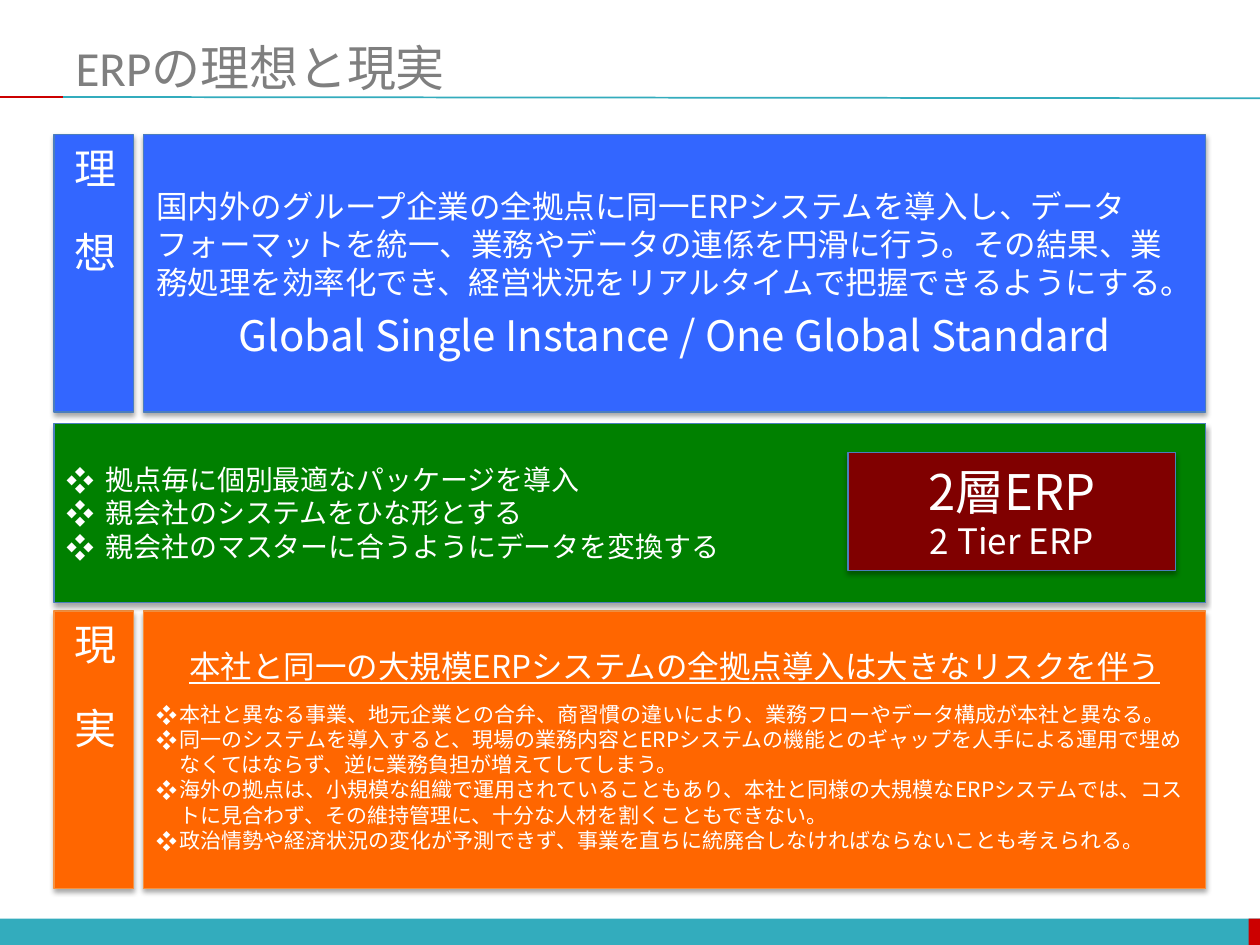
from lxml.etree import SubElement
from pptx import Presentation
from pptx.dml.color import RGBColor
from pptx.enum.shapes import MSO_CONNECTOR, MSO_SHAPE
from pptx.enum.text import MSO_ANCHOR, PP_ALIGN
from pptx.oxml.ns import qn
from pptx.util import Inches, Pt

COLORS = {
    "white": "FFFFFF", "title": "7F7F7F", "teal": "33ACBD", "red": "CC0000",
    "ideal": "3366FF", "reality": "FF6600", "bridge": "008000", "tier": "800000",
    "blue_edge": "4B7EBC", "orange_edge": "F69240", "shadow": "000000",
}
FONT = "Noto Sans CJK JP"
LEFT, RIGHT = 0.43, 9.57
LABEL_WIDTH, BODY_LEFT = 0.63, 1.14
ROW_HEIGHT = 2.2

IDEAL = "国内外のグループ企業の全拠点に同一ERPシステムを導入し、データフォーマットを統一、業務やデータの連係を円滑に行う。その結果、業務処理を効率化でき、経営状況をリアルタイムで把握できるようにする。"
RISK = "本社と同一の大規模ERPシステムの全拠点導入は大きなリスクを伴う"
RISK_POINTS = [
    "本社と異なる事業、地元企業との合弁、商習慣の違いにより、業務フローやデータ構成が本社と異なる。",
    "同一のシステムを導入すると、現場の業務内容とERPシステムの機能とのギャップを人手による運用で埋めなくてはならず、逆に業務負担が増えてしてしまう。",
    "海外の拠点は、小規模な組織で運用されていることもあり、本社と同様の大規模なERPシステムでは、コストに見合わず、その維持管理に、十分な人材を割くこともできない。",
    "政治情勢や経済状況の変化が予測できず、事業を直ちに統廃合しなければならないことも考えられる。",
]
BRIDGE_POINTS = [
    "拠点毎に個別最適なパッケージを導入",
    "親会社のシステムをひな形とする",
    "親会社のマスターに合うようにデータを変換する",
]


def rgb(name):
    return RGBColor.from_string(COLORS[name])


def add_span(para, text, size, color="white", font=FONT, underline=None):
    span = para.add_run()
    span.text = text
    span.font.size = Pt(size)
    span.font.name = font
    span.font.color.rgb = rgb(color)
    span.font.underline = underline
    SubElement(span.font._element, qn("a:ea"), typeface=FONT)
    latin = span.font._element.find(qn("a:latin"))
    latin.addnext(span.font._element.find(qn("a:ea")))


def add_para(frame, text, size, align=PP_ALIGN.LEFT, before=0, indent=None, underline=None):
    first = frame.paragraphs[0]
    para = first if not first.runs else frame.add_paragraph()
    para.alignment = align
    para.line_spacing = Pt(size * 1.2)
    para.space_before = Pt(before)
    if indent:
        props = para._p.get_or_add_pPr()
        props.set("marL", str(Inches(indent)))
        props.set("indent", str(-Inches(indent)))
        SubElement(props, qn("a:buFont"), typeface=FONT)
        SubElement(props, qn("a:buChar"), char="❖")
    add_span(para, text, size, underline=underline)
    return para


def add_panel(page, box, fill, edge="blue_edge"):
    panel = page.shapes.add_shape(MSO_SHAPE.ROUNDED_RECTANGLE, *map(Inches, box))
    panel.adjustments[0] = 0
    panel.fill.solid()
    panel.fill.fore_color.rgb = rgb(fill)
    panel.line.color.rgb = rgb(edge)
    panel.line.width = Pt(0.75)
    panel.shadow.inherit = False
    effects = panel._element.spPr.find(qn("a:effectLst"))
    shadow = SubElement(effects, qn("a:outerShdw"), blurRad=str(Pt(3.1)),
                        dist=str(Pt(1.8)), dir="5400000", rotWithShape="0")
    color = SubElement(shadow, qn("a:srgbClr"), val=COLORS["shadow"])
    SubElement(color, qn("a:alpha"), val="35000")
    frame = panel.text_frame
    frame.word_wrap = True
    frame.vertical_anchor = MSO_ANCHOR.MIDDLE
    return frame


def add_labelled_row(page, top, label, fill, edge):
    label_frame = add_panel(page, (LEFT, top, LABEL_WIDTH, ROW_HEIGHT), fill, edge)
    label_frame._txBody.bodyPr.set("vert", "eaVert")
    para = label_frame.paragraphs[0]
    para.alignment = PP_ALIGN.CENTER
    add_span(para, label, 24)
    return add_panel(page, (BODY_LEFT, top, RIGHT - BODY_LEFT, ROW_HEIGHT), fill, edge)


def add_ideal(page, top):
    frame = add_labelled_row(page, top, "理\u3000想".replace("\u3000", "　"), "ideal", "blue_edge")
    add_para(frame, IDEAL, 18)
    add_para(frame, "Global Single Instance / One Global Standard", 24, PP_ALIGN.CENTER, before=4.8)


def add_bridge(page, box):
    frame = add_panel(page, box, "bridge")
    for point in BRIDGE_POINTS:
        add_para(frame, point, 16, indent=0.31)
    left, top, width, height = box
    tier = add_panel(page, (left + 6.3, top + 0.23, 2.6, 0.94), "tier")
    add_para(tier, "2層ERP", 28, PP_ALIGN.CENTER)
    add_para(tier, "2 Tier ERP", 20, PP_ALIGN.CENTER)


def add_reality(page, top):
    frame = add_labelled_row(page, top, "現　実", "reality", "orange_edge")
    heading = add_para(frame, RISK, 18, PP_ALIGN.CENTER, underline=True)
    heading.space_after = Pt(9.6)
    for point in RISK_POINTS:
        add_para(frame, point, 12, indent=0.19)


def add_title(page, box):
    title = page.shapes.title
    title.left, title.top, title.width, title.height = map(Inches, box)
    frame = title.text_frame
    frame.word_wrap = True
    frame.vertical_anchor = MSO_ANCHOR.MIDDLE
    para = frame.paragraphs[0]
    para.alignment = PP_ALIGN.LEFT
    add_span(para, "ERPの理想と現実", 28, "title", "Calibri")


def add_frame_marks(page):
    for left, width, color in [(0, 10, "teal"), (9.91, 0.09, "red")]:
        bar = page.shapes.add_shape(MSO_SHAPE.RECTANGLE, *map(Inches, (left, 7.29, width, 0.21)))
        bar.fill.solid()
        bar.fill.fore_color.rgb = rgb(color)
        bar.line.fill.background()
        bar.shadow.inherit = False
    for start, end, end_y, color in [(0.5, 10, 0.78, "teal"), (0, 0.5, 0.77, "red")]:
        rule = page.shapes.add_connector(
            MSO_CONNECTOR.STRAIGHT, *map(Inches, (start, 0.77, end, end_y)))
        rule.line.color.rgb = rgb(color)
        rule.line.width = Pt(1)
        SubElement(rule._element.spPr, qn("a:effectLst"))


def main():
    deck = Presentation()
    deck.slide_width, deck.slide_height = Inches(10), Inches(7.5)
    page = deck.slides.add_slide(deck.slide_layouts[5])
    add_frame_marks(page)
    add_title(page, (0.5, 0.3, 9.5, 0.46))
    add_ideal(page, 1.07)
    add_reality(page, 4.85)
    add_bridge(page, (LEFT, 3.36, RIGHT - LEFT, 1.42))
    deck.save("out.pptx")


if __name__ == "__main__":
    main()
